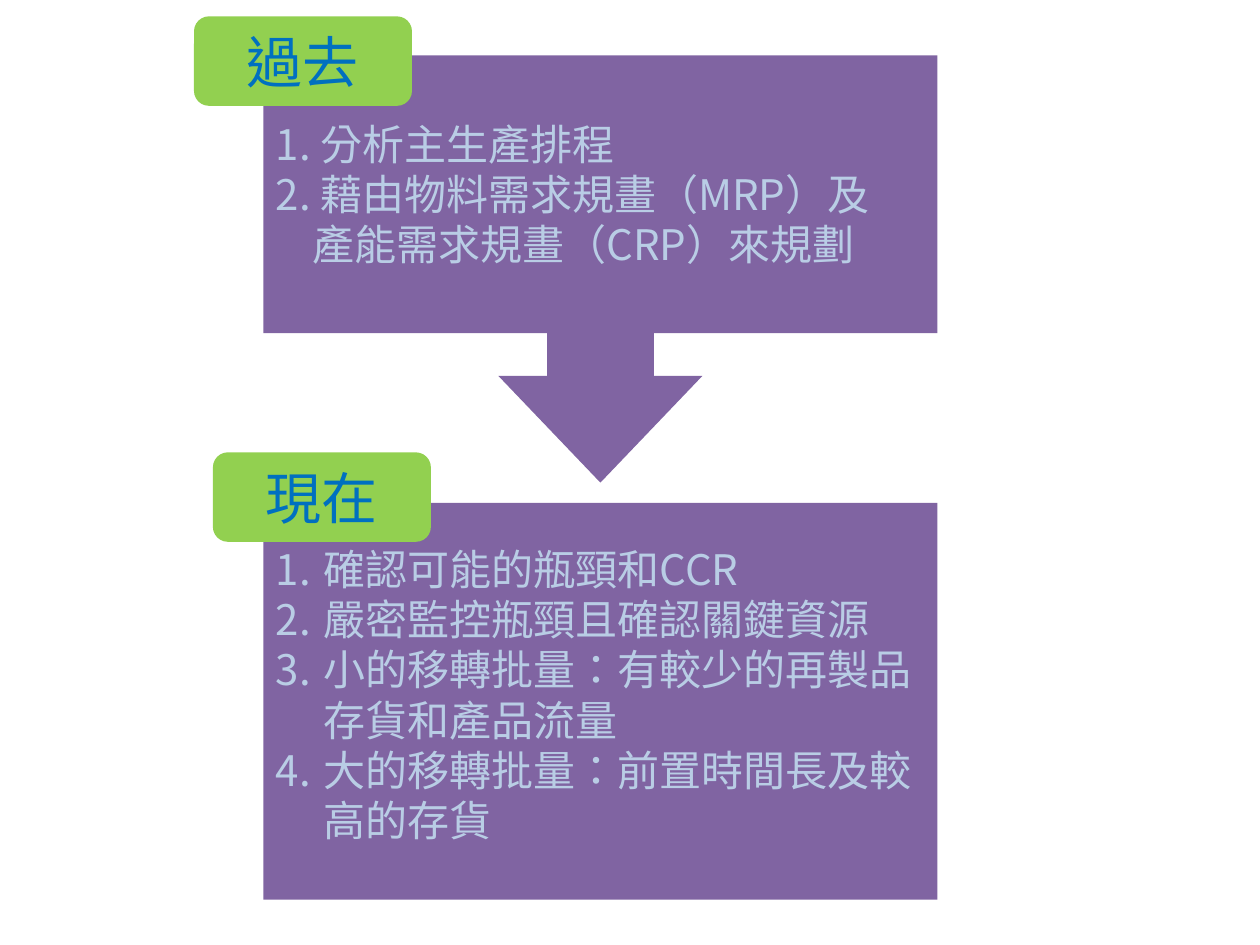
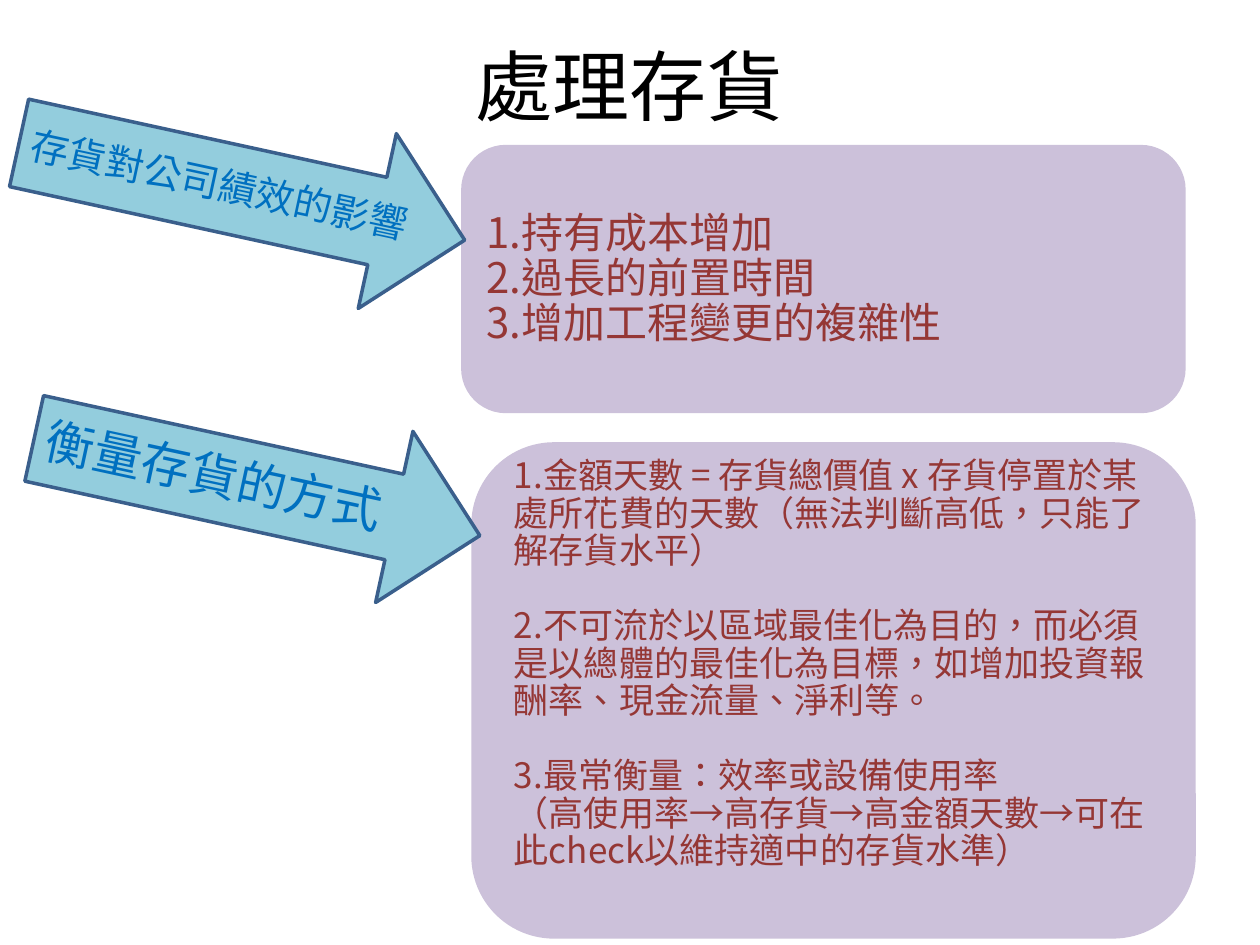
from lxml import etree
from pptx import Presentation
from pptx.dml.color import RGBColor
from pptx.enum import shapes, text
from pptx.oxml import ns
from pptx.util import Inches, Pt

PURPLE = RGBColor(0x80, 0x64, 0xA2)
LILAC = RGBColor(0xCC, 0xC1, 0xDA)
GREEN = RGBColor(0x92, 0xD0, 0x50)
AQUA = RGBColor(0x93, 0xCD, 0xDD)
NAVY = RGBColor(0x3A, 0x5F, 0x8C)
BLUE = RGBColor(0x00, 0x70, 0xC0)
PALE_BLUE = RGBColor(0xB9, 0xCD, 0xE5)
MAROON = RGBColor(0x95, 0x37, 0x35)
BLACK = RGBColor(0, 0, 0)

BODY_FONT = "Noto Sans CJK JP"
TITLE_FONT = "Calibri"
PRESET = shapes.MSO_SHAPE
SINGLE, TIGHT = 1.19, 1.07

PAST = ["1. 分析主生產排程", "2. 藉由物料需求規畫（MRP）及", "產能需求規畫（CRP）來規劃"]
PRESENT = [
    "確認可能的瓶頸和CCR",
    "嚴密監控瓶頸且確認關鍵資源",
    "小的移轉批量：有較少的再製品存貨和產品流量",
    "大的移轉批量：前置時間長及較高的存貨",
]
EFFECTS = ["1.持有成本增加", "2.過長的前置時間", "3.增加工程變更的複雜性"]
MEASURES = [
    "1.金額天數 = 存貨總價值 x 存貨停置於某處所花費的天數（無法判斷高低，只能了解存貨水平）",
    "2.不可流於以區域最佳化為目的，而必須是以總體的最佳化為目標，如增加投資報酬率、現金流量、淨利等。",
    "3.最常衡量：效率或設備使用率",
    "（高使用率→高存貨→高金額天數→可在此check以維持適中的存貨水準）",
]


class Deck:
    """Holds the shared style and the slide being filled."""

    def __init__(self):
        self.file = Presentation()
        self.file.slide_width, self.file.slide_height = Inches(10), Inches(7.5)
        self.slide = None

    def new_slide(self):
        self.slide = self.file.slides.add_slide(self.file.slide_layouts[6])

    def block(self, preset, place, fill, adjustments=(), outline=None, turn=0):
        block = self.slide.shapes.add_shape(preset, *map(Inches, place))
        block.shadow.inherit = False
        block.rotation = turn
        block.fill.solid()
        block.fill.fore_color.rgb = fill
        if outline:
            block.line.color.rgb, block.line.width = outline, Pt(2)
        else:
            block.line.fill.background()
        for index, value in enumerate(adjustments):
            block.adjustments[index] = value
        return block

    def words(self, holder, lines, size, color, font=BODY_FONT, spacing=SINGLE,
              align=text.PP_ALIGN.LEFT, anchor=text.MSO_ANCHOR.MIDDLE):
        frame = holder.text_frame
        frame.word_wrap, frame.vertical_anchor = True, anchor
        for index, line in enumerate(lines):
            paragraph = frame.add_paragraph() if index else frame.paragraphs[0]
            layout = {"alignment": align, "line_spacing": Pt(round(size * spacing, 1))}
            for name, value in layout.items():
                setattr(paragraph, name, value)
            run = paragraph.add_run()
            run.text = line
            for name, value in {"size": Pt(size), "name": font}.items():
                setattr(run.font, name, value)
            run.font.color.rgb = color
            properties = run._r.get_or_add_rPr()
            properties.set("lang", "zh-TW")
            etree.SubElement(properties, ns.qn("a:ea"), typeface=font)
        return frame.paragraphs

    def text_area(self, place, lines, size, color, **style):
        area = self.slide.shapes.add_textbox(*map(Inches, place))
        return self.words(area, lines, size, color, **style)

    def title(self, wording):
        self.text_area((0.5, 0.05, 9, 1.25), [wording], 44, BLACK, font=TITLE_FONT,
                       align=text.PP_ALIGN.CENTER)

    def era_tag(self, left, top, wording):
        tag = self.block(PRESET.ROUNDED_RECTANGLE, (left, top, 1.73, 0.71), GREEN)
        self.words(tag, [wording], 32, BLUE, align=text.PP_ALIGN.CENTER)

    def topic_arrow(self, place, wording, size):
        arrow = self.block(PRESET.RIGHT_ARROW, place, AQUA, outline=NAVY, turn=12.3)
        self.words(arrow, [wording], size, BLUE, spacing=TIGHT)

    def indent(self, paragraph, left, hanging=0, numbered=False):
        properties = paragraph._p.get_or_add_pPr()
        properties.set("marL", str(Inches(left)))
        properties.set("indent", str(-Inches(hanging)))
        if numbered:
            etree.SubElement(properties, ns.qn("a:buFont"), typeface="+mj-lt")
            etree.SubElement(properties, ns.qn("a:buAutoNum"), type="arabicPeriod")


def past_and_present(deck):
    deck.new_slide()
    past = deck.block(PRESET.DOWN_ARROW_CALLOUT, (2.09, 0.44, 5.35, 3.39), PURPLE,
                      (0.25, 0.239, 0.25, 0.65))
    plans = deck.words(past, PAST, 24, PALE_BLUE)
    deck.indent(plans[-1], 0.29)
    deck.era_tag(1.54, 0.13, "過去")
    deck.block(PRESET.RECTANGLE, (2.09, 3.99, 5.35, 3.15), PURPLE)
    deck.era_tag(1.69, 3.59, "現在")
    steps = deck.text_area((2.09, 4.27, 5.28, 2.83), PRESENT, 24, PALE_BLUE,
                           anchor=text.MSO_ANCHOR.TOP)
    for step in steps:
        deck.indent(step, 0.38, 0.38, numbered=True)


def handling_inventory(deck):
    deck.new_slide()
    deck.title("處理存貨")
    effects = deck.block(PRESET.ROUNDED_RECTANGLE, (3.66, 1.15, 5.75, 2.13), LILAC)
    deck.words(effects, EFFECTS, 24, MAROON, spacing=TIGHT)
    deck.topic_arrow((0.11, 0.81, 3.62, 1.42), "存貨對公司績效的影響", 22)
    deck.block(PRESET.ROUNDED_RECTANGLE, (3.74, 3.51, 5.75, 3.94), LILAC)
    deck.topic_arrow((0.23, 3.17, 3.62, 1.39), "衡量存貨的方式", 28)
    measures = deck.text_area((3.98, 3.59, 5.28, 3.74), MEASURES, 20, MAROON,
                              spacing=TIGHT, anchor=text.MSO_ANCHOR.TOP)
    for measure in measures[1:3]:
        measure.space_before = Pt(21.4)


def main():
    deck = Deck()
    past_and_present(deck)
    handling_inventory(deck)
    deck.file.save("out.pptx")


if __name__ == "__main__":
    main()
